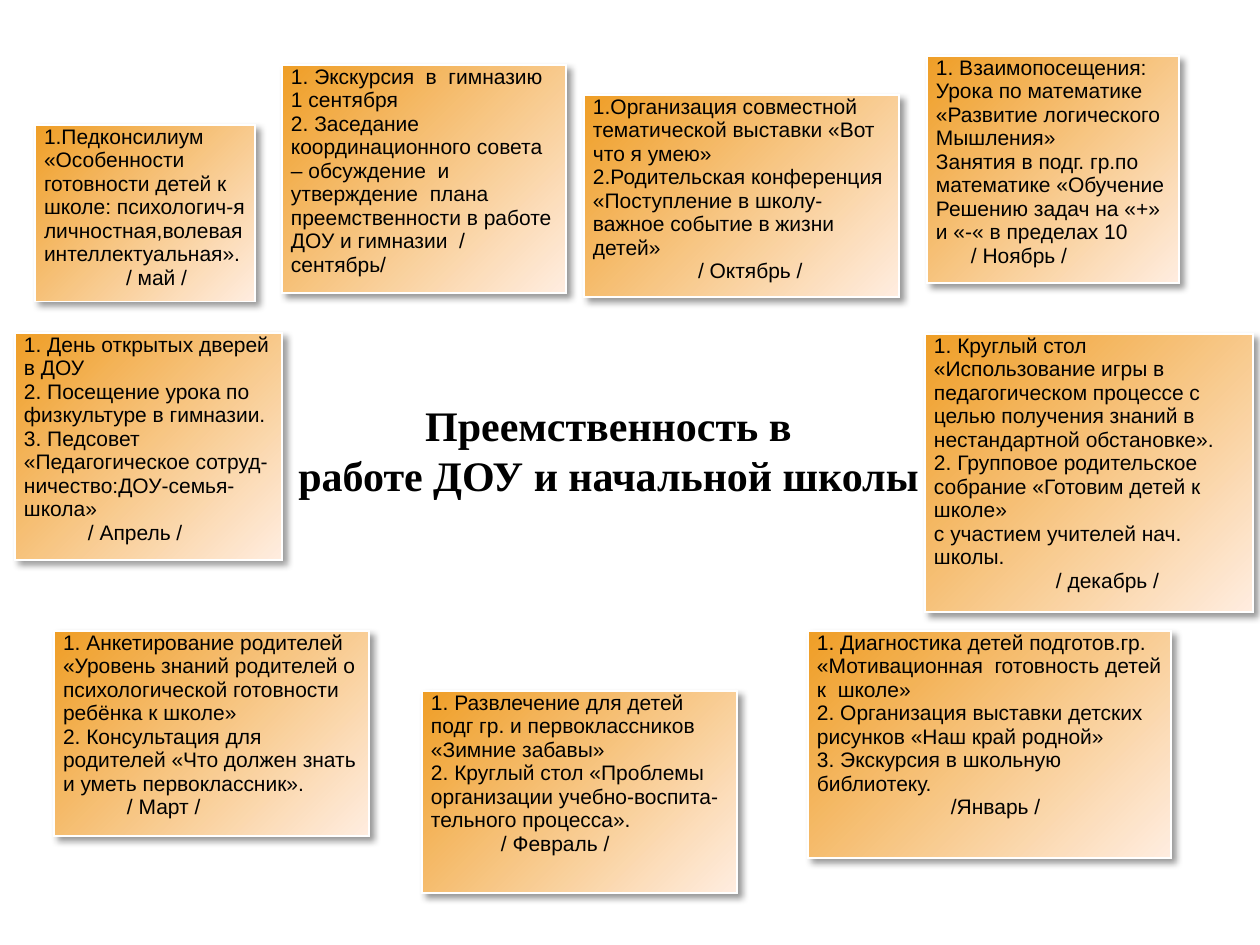
"""Build a slide of monthly plans around the theme of preschool and school continuity."""
import pptx
import pptx.dml.color
import pptx.enum.text
import pptx.oxml
import pptx.oxml.ns
import pptx.util

THEME = {
    "heading": {"name": "Times New Roman", "size": 24, "bold": True},
    "body": {"name": "Arial", "size": 12, "bold": False},
    "ink": "000000",
    "border": "FFFFFF",
    "gradient": ("EF9E26", "FFEDE0"),
}
SLIDE = (1260, 945)
HEADING = ["Преемственность в", "работе ДОУ и начальной школы"]
HEADING_BOX = (282, 393, 653, 115)
CELL_MARGIN = 9

PLANS = [
    {"box": (282, 65, 284, 228), "month": None, "lines": [
        "1. Экскурсия  в  гимназию",
        "1 сентября",
        "2. Заседание координационного совета – обсуждение  и",
        "утверждение  плана преемственности в работе ДОУ и гимназии  / сентябрь/"]},
    {"box": (584, 95, 315, 202), "month": ("/ Октябрь /", 105), "lines": [
        "1.Организация совместной тематической выставки «Вот что я умею»",
        "2.Родительская конференция «Поступление в школу-важное событие в жизни детей»"]},
    {"box": (927, 56, 252, 227), "month": ("/ Ноябрь /", 35), "lines": [
        "1. Взаимопосещения:",
        "Урока по математике",
        "«Развитие логического",
        "Мышления»",
        "Занятия в подг. гр.по математике «Обучение",
        "Решению задач на «+»",
        "и «-« в пределах 10"]},
    {"box": (808, 631, 363, 227), "month": ("/Январь /", 134), "lines": [
        "1. Диагностика детей подготов.гр.",
        "«Мотивационная  готовность детей",
        "к  школе»",
        "2. Организация выставки детских рисунков «Наш край родной»",
        "3. Экскурсия в школьную библиотеку."]},
    {"box": (925, 334, 328, 278), "month": ("/ декабрь /", 122), "lines": [
        "1. Круглый стол «Использование игры в педагогическом процессе с целью "
        "получения знаний в нестандартной обстановке».",
        "2. Групповое родительское собрание «Готовим детей к школе»",
        "с участием учителей нач. школы."]},
    {"box": (422, 691, 315, 202), "month": ("/ Февраль /", 70), "lines": [
        "1. Развлечение для детей подг гр. и первоклассников «Зимние забавы»",
        "2. Круглый стол «Проблемы организации учебно-воспита-",
        "тельного процесса»."]},
    {"box": (54, 631, 315, 205), "month": ("/ Март /", 64), "lines": [
        "1. Анкетирование родителей",
        "«Уровень знаний родителей о",
        "психологической готовности",
        "ребёнка к школе»",
        "2. Консультация для родителей «Что должен знать",
        "и уметь первоклассник»."]},
    {"box": (15, 333, 267, 227), "month": ("/ Апрель /", 64), "lines": [
        "1. День открытых дверей в ДОУ",
        "2. Посещение урока по физкультуре в гимназии.",
        "3. Педсовет «Педагогическое сотруд-",
        "ничество:ДОУ-семья-школа»"]},
    {"box": (35, 125, 220, 176), "month": ("/ май /", 82), "lines": [
        "1.Педконсилиум «Особенности готовности детей к школе: психологич-я",
        "личностная,волевая",
        "интеллектуальная»."]},
]


def px(length):
    return pptx.util.Emu(round(length * 914400 / 126))


def rgb(value):
    return pptx.dml.color.RGBColor.from_string(value)


def set_format(target, values):
    for name, value in values.items():
        setattr(target, name, value)


def xml(body):
    tag, rest = body[1:].split(" ", 1)
    return pptx.oxml.parse_xml(f"<{tag} {pptx.oxml.ns.nsdecls('a')} {rest}")


def write_lines(frame, lines, style):
    for index, line in enumerate(lines):
        paragraph = frame.paragraphs[0] if index == 0 else frame.add_paragraph()
        run = paragraph.add_run()
        run.text = line
        set_format(run.font, {**THEME[style], "size": pptx.util.Pt(THEME[style]["size"])})
        run.font.color.rgb = rgb(THEME["ink"])


def add_heading(slide):
    frame = slide.shapes.add_textbox(*map(px, HEADING_BOX)).text_frame
    set_format(frame, {"word_wrap": False,
                       "auto_size": pptx.enum.text.MSO_AUTO_SIZE.SHAPE_TO_FIT_TEXT})
    write_lines(frame, HEADING, "heading")
    for paragraph in frame.paragraphs:
        paragraph.alignment = pptx.enum.text.PP_ALIGN.CENTER


def paint_cell(cell):
    cell.fill.gradient()
    cell.fill.gradient_angle = 315
    for stop, color in zip(cell.fill.gradient_stops, THEME["gradient"]):
        stop.color.rgb = rgb(color)
    properties = cell._tc.get_or_add_tcPr()
    for index, side in enumerate("LRTB"):
        properties.insert(index, xml(
            f'<a:ln{side} w="12700"><a:solidFill><a:srgbClr val="{THEME["border"]}"/>'
            f'</a:solidFill></a:ln{side}>'))


def add_plan(slide, plan):
    table = slide.shapes.add_table(1, 1, *map(px, plan["box"])).table
    set_format(table, {"first_row": False, "horz_banding": False})
    table._tbl.tblPr.insert(0, xml(
        '<a:effectLst ><a:outerShdw blurRad="50800" dist="38100" dir="2700000" algn="tl" '
        'rotWithShape="0"><a:srgbClr val="000000"><a:alpha val="40000"/></a:srgbClr>'
        '</a:outerShdw></a:effectLst>'))
    cell = table.cell(0, 0)
    set_format(cell, {"margin_left": px(CELL_MARGIN), "margin_right": px(CELL_MARGIN),
                      "margin_top": 0, "margin_bottom": 0})
    paint_cell(cell)
    month = plan["month"]
    write_lines(cell.text_frame, plan["lines"] + ([month[0]] if month else []), "body")
    if month:
        cell.text_frame.paragraphs[-1]._p.get_or_add_pPr().set("marL", str(px(month[1])))


def main():
    deck = pptx.Presentation()
    deck.slide_width, deck.slide_height = map(px, SLIDE)
    slide = deck.slides.add_slide(deck.slide_layouts[6])
    add_heading(slide)
    for plan in PLANS:
        add_plan(slide, plan)
    deck.save("out.pptx")


if __name__ == "__main__":
    main()
